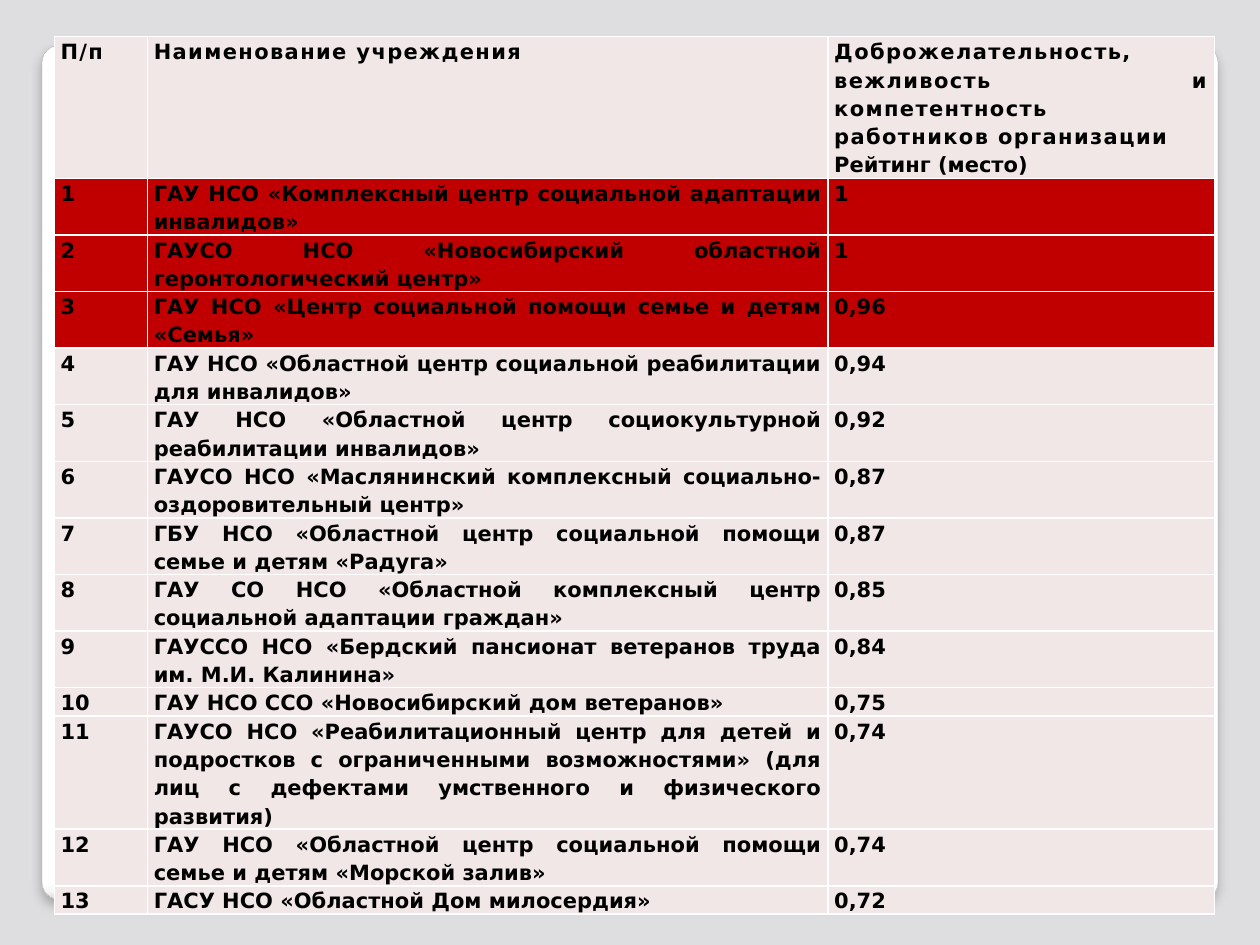
from lxml.etree import SubElement
from pptx import Presentation
from pptx.dml.color import RGBColor
from pptx.enum.shapes import MSO_SHAPE
from pptx.enum.text import PP_ALIGN
from pptx.oxml.ns import qn
from pptx.util import Pt

FONT = "DejaVu Sans"
BACKGROUND = RGBColor(0xDE, 0xDE, 0xE0)
PANEL_LINE = RGBColor(0xA4, 0xA4, 0xA4)
WHITE = RGBColor(0xFF, 0xFF, 0xFF)
PANEL_EDGE = RGBColor(0xF7, 0xF7, 0xF7)
PANEL_BASE = RGBColor(0xDA, 0xDA, 0xDA)
BLACK = RGBColor(0, 0, 0)
PALE = RGBColor(0xF1, 0xE7, 0xE7)
RED = RGBColor(0xC0, 0, 0)

PANEL_STOPS = [(0, WHITE), (98, WHITE), (99, PANEL_EDGE), (100, PANEL_BASE)]
COLUMN_WIDTHS = [53.3, 388.8, 221]
HEADER_HEIGHT = 81
LEADERS = 3  # rows marked in red

HEADERS = [
    "П/п",
    "Наименование учреждения",
    "Доброжелательность, вежливость и компетентность работников организации",
]
HEADER_NOTE = "Рейтинг (место)"

# Institution, rating, row height
RATINGS = [
    ("ГАУ НСО «Комплексный центр социальной адаптации инвалидов»", "1", 29.5),
    ("ГАУСО НСО «Новосибирский областной геронтологический центр»", "1", 29.5),
    ("ГАУ НСО «Центр социальной помощи семье и детям «Семья»", "0,96", 29.5),
    ("ГАУ НСО «Областной центр социальной реабилитации для инвалидов»", "0,94", 29.5),
    ("ГАУ НСО «Областной центр социокультурной реабилитации инвалидов»", "0,92", 29.5),
    ("ГАУСО НСО «Маслянинский комплексный социально-оздоровительный центр»", "0,87", 29.5),
    ("ГБУ НСО «Областной центр социальной помощи семье и детям «Радуга»", "0,87", 29.5),
    ("ГАУ СО НСО «Областной комплексный центр социальной адаптации граждан»", "0,85", 29.5),
    ("ГАУССО НСО «Бердский пансионат ветеранов труда им. М.И. Калинина»", "0,84", 29.5),
    ("ГАУ НСО ССО «Новосибирский дом ветеранов»", "0,75", 14.5),
    ("ГАУСО НСО «Реабилитационный центр для детей и подростков с ограниченными "
     "возможностями» (для лиц с дефектами умственного и физического развития)", "0,74", 60.5),
    ("ГАУ НСО «Областной центр социальной помощи семье и детям «Морской залив»", "0,74", 29.5),
    ("ГАСУ НСО «Областной Дом милосердия»", "0,72", 14.5),
]


def add_color(parent, color, alpha=None):
    element = SubElement(parent, qn("a:srgbClr"), val=str(color))
    if alpha is not None:
        SubElement(element, qn("a:alpha"), val=str(alpha * 1000))


def write_text(paragraph, text, size=12, color=BLACK, bold=True, spacing=0):
    paragraph.alignment = PP_ALIGN.JUSTIFY
    paragraph.line_spacing = 1.15
    run = paragraph.add_run()
    run.text = text
    run.font.name = FONT
    run.font.size = Pt(size)
    run.font.bold = bold
    run.font.color.rgb = color
    if spacing:
        run.font._element.set("spc", str(round(spacing * 100)))


def add_panel(slide):
    panel = slide.shapes.add_shape(
        MSO_SHAPE.ROUNDED_RECTANGLE, Pt(24), Pt(26), Pt(672), Pt(488))
    panel.adjustments[0] = 0.02
    panel.line.color.rgb = PANEL_LINE
    panel.line.width = Pt(0.16)

    # Gradient with four stops, running downwards
    panel.fill.gradient()
    panel.fill.gradient_angle = 270
    properties = panel._element.spPr
    stops = properties.find(qn("a:gradFill")).find(qn("a:gsLst"))
    for stop in list(stops):
        stops.remove(stop)
    for position, color in PANEL_STOPS:
        add_color(SubElement(stops, qn("a:gs"), pos=str(position * 1000)), color)

    # Soft shadow below
    panel.shadow.inherit = False
    shadow = SubElement(
        properties.find(qn("a:effectLst")), qn("a:outerShdw"),
        blurRad=str(Pt(6)), dist=str(Pt(4)), dir="5400000", rotWithShape="0")
    add_color(shadow, BLACK, alpha=25)


def format_cell(cell, fill):
    cell.margin_left = cell.margin_right = Pt(3.6)
    cell.margin_top = cell.margin_bottom = Pt(0)
    cell_properties = cell._tc.get_or_add_tcPr()
    for side in ("lnL", "lnR", "lnT", "lnB"):
        border = SubElement(cell_properties, qn(f"a:{side}"), w=str(Pt(1)))
        add_color(SubElement(border, qn("a:solidFill")), WHITE)
    cell.fill.solid()
    cell.fill.fore_color.rgb = fill


def fill_row(row, texts, fill, spacing=0):
    for cell, text in zip(row.cells, texts):
        format_cell(cell, fill)
        write_text(cell.text_frame.paragraphs[0], text, spacing=spacing)


def add_rating_table(slide):
    heights = [HEADER_HEIGHT] + [height for _, _, height in RATINGS]
    table = slide.shapes.add_table(
        len(heights), len(COLUMN_WIDTHS), Pt(31), Pt(20.9),
        Pt(sum(COLUMN_WIDTHS)), Pt(sum(heights))).table
    for column, width in zip(table.columns, COLUMN_WIDTHS):
        column.width = Pt(width)
    for row, height in zip(table.rows, heights):
        row.height = Pt(height)

    # Header
    fill_row(table.rows[0], HEADERS, PALE, spacing=0.8)
    write_text(table.cell(0, 2).text_frame.add_paragraph(), HEADER_NOTE)

    # Numbered institutions
    for number, (name, rating, _) in enumerate(RATINGS, start=1):
        fill = RED if number <= LEADERS else PALE
        fill_row(table.rows[number], [str(number), name, rating], fill)


def main():
    presentation = Presentation()
    presentation.slide_width = Pt(720)
    presentation.slide_height = Pt(540)
    slide = presentation.slides.add_slide(presentation.slide_layouts[6])
    slide.background.fill.solid()
    slide.background.fill.fore_color.rgb = BACKGROUND
    add_panel(slide)
    add_rating_table(slide)
    presentation.save("out.pptx")


if __name__ == "__main__":
    main()
